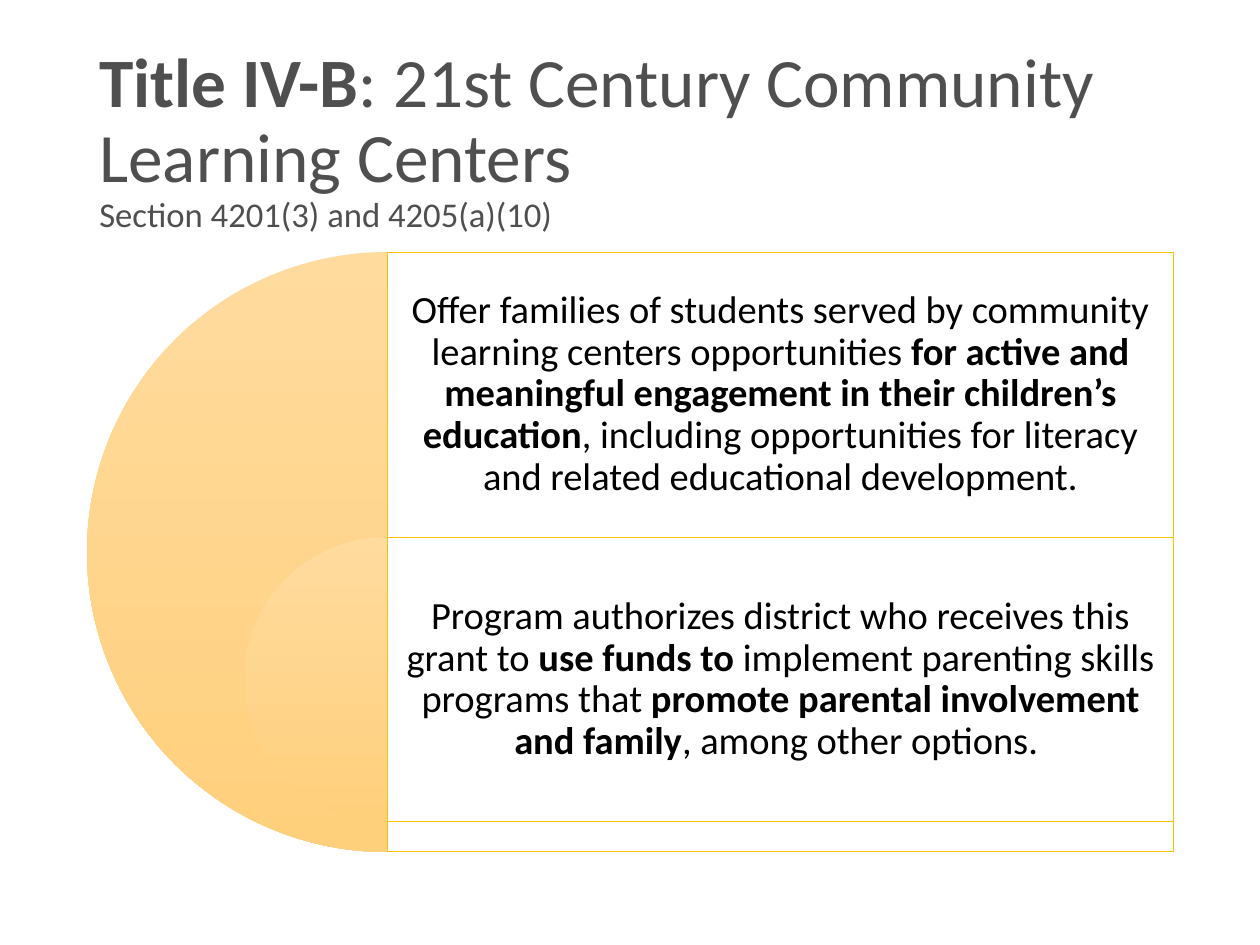
from lxml.etree import SubElement
from pptx import Presentation
from pptx.dml.color import RGBColor
from pptx.enum.shapes import MSO_SHAPE
from pptx.enum.text import MSO_ANCHOR, PP_ALIGN
from pptx.oxml.ns import qn
from pptx.util import Emu, Pt

PX = 914400 / 126
GREY = RGBColor(0x4F, 0x4F, 0x4F)
BLACK = RGBColor(0, 0, 0)
WHITE = RGBColor(0xFF, 0xFF, 0xFF)
GOLD = RGBColor(0xFF, 0xC0, 0x00)
PEACH_TOP = RGBColor(0xFF, 0xDB, 0x9E)
PEACH_BOTTOM = RGBColor(0xFF, 0xD0, 0x7C)


def px(*lengths):
    return [Emu(round(n * PX)) for n in lengths]


def add_text(box, size, color, align):
    tf = s.shapes.add_textbox(*px(*box)).text_frame
    tf.word_wrap = True
    tf.vertical_anchor = MSO_ANCHOR.MIDDLE
    p = tf.paragraphs[0]
    p.alignment = align
    p.line_spacing = 0.9
    p.font.name = "Calibri"
    p.font.size = Pt(size)
    p.font.color.rgb = color
    return tf


prs = Presentation()
prs.slide_width, prs.slide_height = px(1260, 945)
s = prs.slides.add_slide(prs.slide_layouts[6])

# Title with the section reference below it
p = add_text((87, 50, 1086, 183), 39.6, GREY, PP_ALIGN.LEFT).paragraphs[0]
r = p.add_run()
r.text = "Title IV-B"
r.font.bold = True
p.add_run().text = ": 21st Century Community Learning Centers"
p.add_line_break()
r = p.add_run()
r.text = "Section 4201(3) and 4205(a)(10)"
r.font.size = Pt(19.8)

# Rows: half-disc diameter, panel height, and (text, bold) pieces
TOP, ROW, MID, PANEL_W = 252, 285, 387, 787
rows = [
    (600, 600, [
        ("Offer families of students served by community learning centers opportunities ", False),
        ("for active and meaningful engagement in their children’s education", True),
        (", including opportunities for literacy and related educational development.", False),
    ]),
    (285, 285, [
        ("Program authorizes district who receives this grant to ", False),
        ("use funds to ", True),
        ("implement parenting skills programs that ", False),
        ("promote parental involvement and family", True),
        (", among other options. ", False),
    ]),
]

for i, (diameter, height, pieces) in enumerate(rows):
    y = TOP + i * ROW

    # Left half-disc
    sp = s.shapes.add_shape(MSO_SHAPE.PIE, *px(MID - diameter / 2, y, diameter, diameter))
    sp.shadow.inherit = False
    sp.adjustments[0], sp.adjustments[1] = 54, 162
    sp.line.fill.background()
    sp.fill.gradient()
    sp.fill.gradient_angle = 270
    for stop, color in zip(sp.fill.gradient_stops, (PEACH_TOP, PEACH_BOTTOM)):
        stop.color.rgb = color

    # Panel, 90% opaque
    sp = s.shapes.add_shape(MSO_SHAPE.RECTANGLE, *px(MID, y, PANEL_W, height))
    sp.shadow.inherit = False
    sp.fill.solid()
    sp.fill.fore_color.rgb = WHITE
    fill = sp.fill._xPr.find(qn("a:solidFill"))
    SubElement(fill[0], qn("a:alpha"), val="90000")
    sp.line.color.rgb = GOLD
    sp.line.width = Pt(0.5)

    # Panel text
    tf = add_text((MID, y, PANEL_W, ROW), 22, BLACK, PP_ALIGN.CENTER)
    tf.margin_left, tf.margin_top, tf.margin_right, tf.margin_bottom = px(11, 11, 11, 11)
    for text, bold in pieces:
        r = tf.paragraphs[0].add_run()
        r.text = text
        r.font.bold = bold

prs.save("out.pptx")
